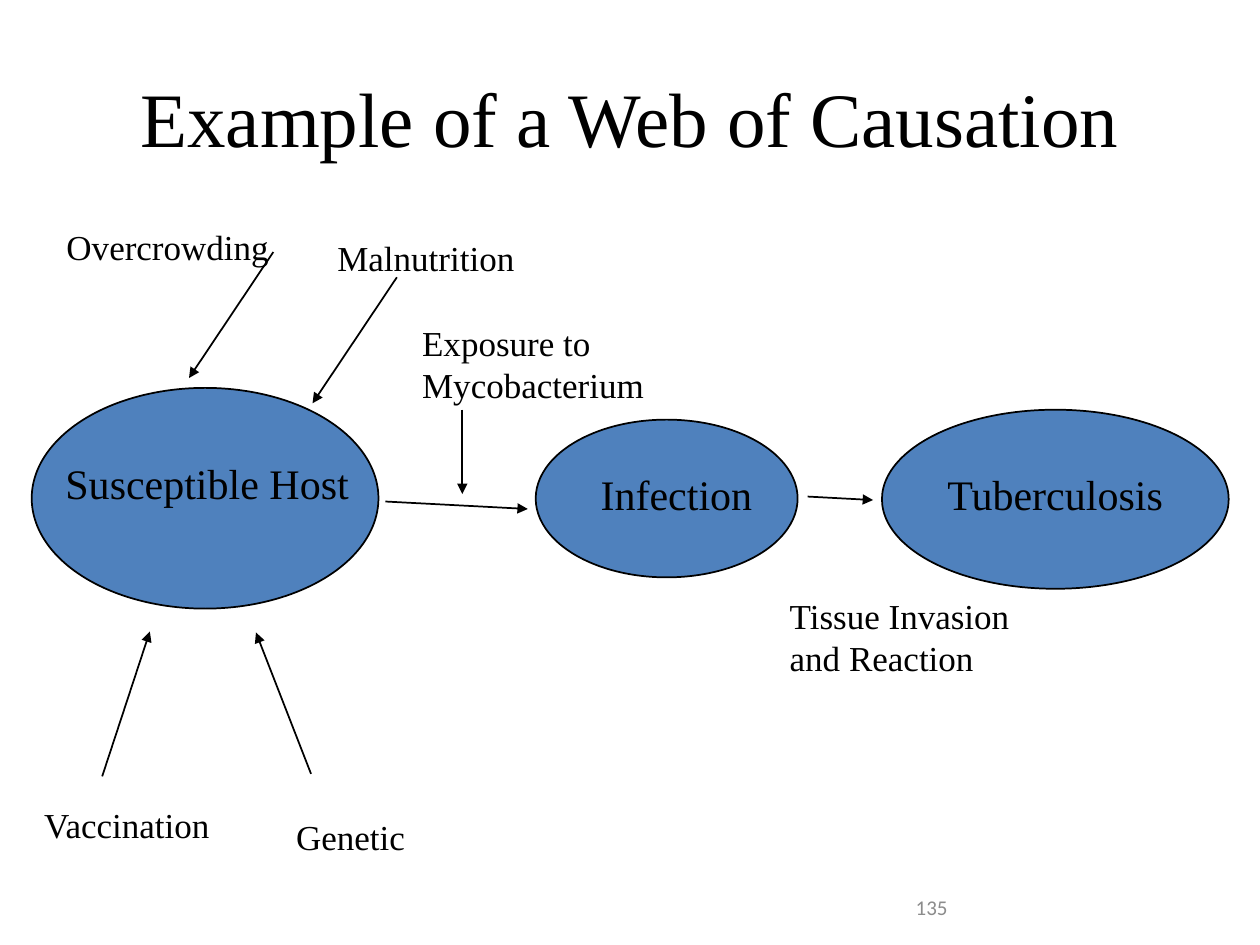
from dataclasses import dataclass

from lxml import etree
from pptx import Presentation
from pptx import util as u
from pptx.dml.color import RGBColor
from pptx.enum import shapes, text
from pptx.oxml import ns

BLACK = RGBColor(0x00, 0x00, 0x00)
BLUE = RGBColor(0x4F, 0x81, 0xBD)
GREY = RGBColor(0x8C, 0x8C, 0x8C)
SERIF = "Times New Roman"


@dataclass
class Box:
    left: float
    top: float
    width: float
    height: float

    def place(self) -> tuple:
        return tuple(u.Cm(n) for n in (self.left, self.top, self.width, self.height))


@dataclass
class Label:
    words: str
    box: Box
    size: int = 20
    font: str = SERIF
    color: RGBColor = BLACK
    anchor: text.MSO_ANCHOR = text.MSO_ANCHOR.TOP


@dataclass
class Node:
    oval: Box
    label: Label


@dataclass
class Arrow:
    start: tuple[float, float]
    end: tuple[float, float]


NODES = [
    Node(Box(0.64, 7.82, 6.99, 4.45), Label("Susceptible Host", Box(1.07, 9.09, 6.78, 1.27), 24)),
    Node(Box(10.8, 8.46, 5.28, 3.18), Label("Infection", Box(11.86, 9.32, 4.24, 1.27), 24)),
    Node(Box(17.78, 8.26, 6.99, 3.61), Label("Tuberculosis", Box(18.85, 9.32, 5.08, 1.27), 24)),
]
CAUSES = [
    Label("Vaccination", Box(0.64, 16.08, 4.24, 1.09)),
    Label("Genetic", Box(5.72, 16.31, 2.97, 1.09)),
    Label("Overcrowding", Box(1.09, 4.42, 4.88, 1.09)),
    Label("Malnutrition", Box(6.55, 4.65, 4.88, 1.09)),
    Label("Tissue Invasion and Reaction", Box(15.67, 11.86, 5.92, 1.96)),
    Label("Exposure to Mycobacterium", Box(8.26, 6.35, 5.08, 1.96)),
]
ARROWS = [
    Arrow((8, 5.59), (6.3, 8.13)),
    Arrow((5.51, 5.08), (3.81, 7.62)),
    Arrow((6.27, 15.6), (5.16, 12.75)),
    Arrow((2.06, 15.65), (3.02, 12.73)),
    Arrow((7.77, 10.11), (10.64, 10.26)),
    Arrow((16.28, 10.01), (17.6, 10.08)),
    Arrow((9.32, 8.26), (9.32, 9.96)),
]
TITLE = Label("Example of a Web of Causation", Box(1.27, 0.76, 22.86, 3.18), 44,
              anchor=text.MSO_ANCHOR.MIDDLE)
NUMBER = Label("135", Box(18.21, 17.65, 5.92, 1.02), 12, "Calibri", GREY,
               text.MSO_ANCHOR.BOTTOM)


def write(shape, label: Label, align=text.PP_ALIGN.LEFT) -> None:
    frame = shape.text_frame
    frame.word_wrap = True
    frame.vertical_anchor = label.anchor
    frame.text = label.words
    para = frame.paragraphs[0]
    para.alignment = align
    para.font.size = u.Pt(label.size)
    para.font.name = label.font
    para.font.color.rgb = label.color


def draw_title(slide, label: Label) -> None:
    title = slide.shapes.title
    title.left, title.top, title.width, title.height = label.box.place()
    write(title, label, text.PP_ALIGN.CENTER)


def draw_label(slide, label: Label) -> None:
    write(slide.shapes.add_textbox(*label.box.place()), label)


def draw_node(slide, node: Node) -> None:
    oval = slide.shapes.add_shape(shapes.MSO_SHAPE.OVAL, *node.oval.place())
    oval.shadow.inherit = False
    oval.fill.solid()
    oval.fill.fore_color.rgb = BLUE
    oval.line.color.rgb = BLACK
    oval.line.width = u.Pt(1)
    draw_label(slide, node.label)


def draw_arrow(slide, arrow: Arrow) -> None:
    ends = [u.Cm(n) for n in arrow.start + arrow.end]
    link = slide.shapes.add_connector(shapes.MSO_CONNECTOR.STRAIGHT, *ends)
    link.line.color.rgb = BLACK
    link.line.width = u.Pt(1)
    line = link.line._get_or_add_ln()
    etree.SubElement(line, ns.qn("a:tailEnd"), type="triangle")
    etree.SubElement(link._element.spPr, ns.qn("a:effectLst"))


def main() -> None:
    deck = Presentation()
    deck.slide_width, deck.slide_height = u.Cm(25.4), u.Cm(19.05)
    slide = deck.slides.add_slide(deck.slide_layouts[5])
    draw_title(slide, TITLE)
    for node in NODES:
        draw_node(slide, node)
    for arrow in ARROWS:
        draw_arrow(slide, arrow)
    for label in CAUSES + [NUMBER]:
        draw_label(slide, label)
    deck.save("out.pptx")


if __name__ == "__main__":
    main()
